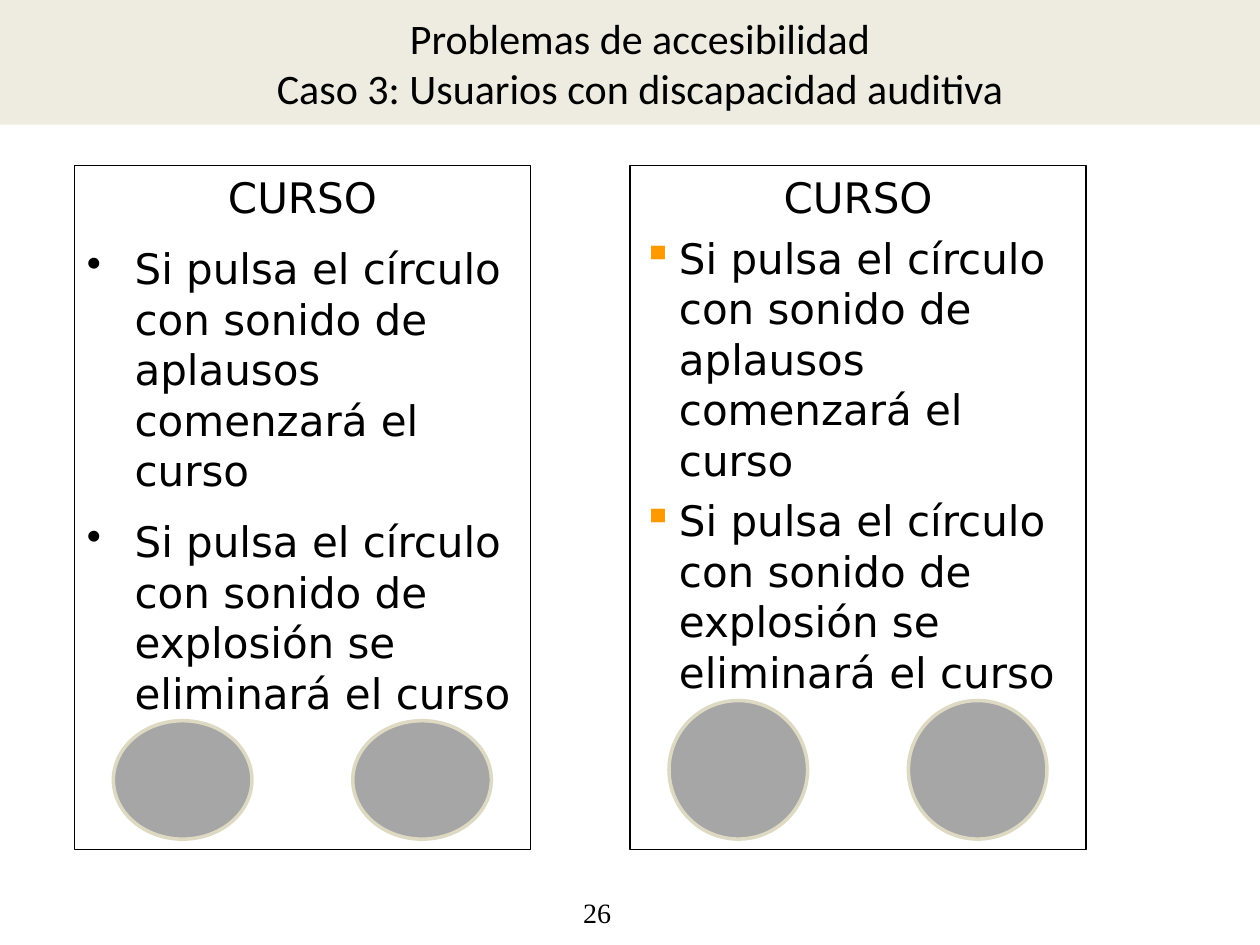
import pptx
import pptx.util
import pptx.dml.color
import pptx.enum.shapes
import pptx.enum.text
import pptx.oxml.ns
import lxml.etree

Inches = pptx.util.Inches
Pt = pptx.util.Pt
Shapes = pptx.enum.shapes.MSO_SHAPE
Align = pptx.enum.text.PP_ALIGN
Anchor = pptx.enum.text.MSO_ANCHOR

presentation = pptx.Presentation()
presentation.slide_width = Inches(10)
presentation.slide_height = Inches(7.5)
width, height = presentation.slide_width, presentation.slide_height
slide = presentation.slides.add_slide(presentation.slide_layouts[6])


def color(value):
    return pptx.dml.color.RGBColor.from_string(value)


def add_shape(kind, left, top, wide, high, fill=None, line=None, weight=0.75):
    shape = slide.shapes.add_shape(kind, int(left), int(top), int(wide), int(high))
    shape.shadow.inherit = False
    if fill:
        shape.fill.solid()
        shape.fill.fore_color.rgb = color(fill)
    else:
        shape.fill.background()
    if line:
        shape.line.color.rgb = color(line)
        shape.line.width = Pt(weight)
    else:
        shape.line.fill.background()
    return shape


title = add_shape(Shapes.RECTANGLE, 0, 0, width, height * 0.132, fill="EEECE1")
title_format = {
    "word_wrap": True,
    "vertical_anchor": Anchor.MIDDLE,
    "margin_left": Inches(0.55),
    "margin_right": Inches(0.39),
}
for name, value in title_format.items():
    setattr(title.text_frame, name, value)
paragraph = title.text_frame.paragraphs[0]
paragraph.text = "Problemas de accesibilidad\nCaso 3: Usuarios con discapacidad auditiva"
paragraph.alignment = Align.CENTER
for name, value in {"size": Pt(24), "name": "Calibri"}.items():
    setattr(paragraph.font, name, value)
paragraph.font.color.rgb = color("000000")

panel_texts = [
    "CURSO",
    "Si pulsa el círculo con sonido de aplausos comenzará el curso",
    "Si pulsa el círculo con sonido de explosión se eliminará el curso",
]
panels = [
    {"left": 0.059, "bullet": "•", "bullet_color": "000000", "indent": 0.38, "space": 12, "circle_height": 0.94},
    {"left": 0.5, "bullet": "▪", "bullet_color": "FF9900", "indent": 0.29, "space": 6, "circle_height": 1.1},
]
circle_bottom = height * 0.888

for panel in panels:
    left = width * panel["left"]
    box = add_shape(Shapes.RECTANGLE, left, height * 0.175, width * 0.362, height * 0.724, line="000000")
    box.text_frame.word_wrap = True
    box.text_frame.vertical_anchor = Anchor.TOP
    for index, text in enumerate(panel_texts):
        paragraph = box.text_frame.paragraphs[0] if index == 0 else box.text_frame.add_paragraph()
        paragraph.text = text
        paragraph.alignment = Align.LEFT if index else Align.CENTER
        if index:
            paragraph.space_before = Pt(panel["space"])
            properties = paragraph._p.get_or_add_pPr()
            properties.set("marL", str(Inches(panel["indent"])))
            properties.set("indent", str(-Inches(panel["indent"])))
            bullet_color = lxml.etree.SubElement(properties, pptx.oxml.ns.qn("a:buClr"))
            lxml.etree.SubElement(bullet_color, pptx.oxml.ns.qn("a:srgbClr"), val=panel["bullet_color"])
            lxml.etree.SubElement(properties, pptx.oxml.ns.qn("a:buChar"), char=panel["bullet"])
        for name, value in {"size": Pt(24), "name": "DejaVu Sans"}.items():
            setattr(paragraph.font, name, value)
        paragraph.font.color.rgb = color("000000")
    circle_height = Inches(panel["circle_height"])
    for column in range(2):
        add_shape(Shapes.OVAL, left + width * (0.031 + 0.19 * column), circle_bottom - circle_height,
                  width * 0.11, circle_height, fill="A6A6A6", line="DDD9C3", weight=2)

number = slide.shapes.add_textbox(int(width * 0.453), int(height * 0.941), int(width * 0.067), int(height * 0.049))
number.text_frame.word_wrap = True
paragraph = number.text_frame.paragraphs[0]
paragraph.text = "26"
for name, value in {"size": Pt(16), "name": "Times New Roman"}.items():
    setattr(paragraph.font, name, value)
paragraph.font.color.rgb = color("000000")

presentation.save("out.pptx")
